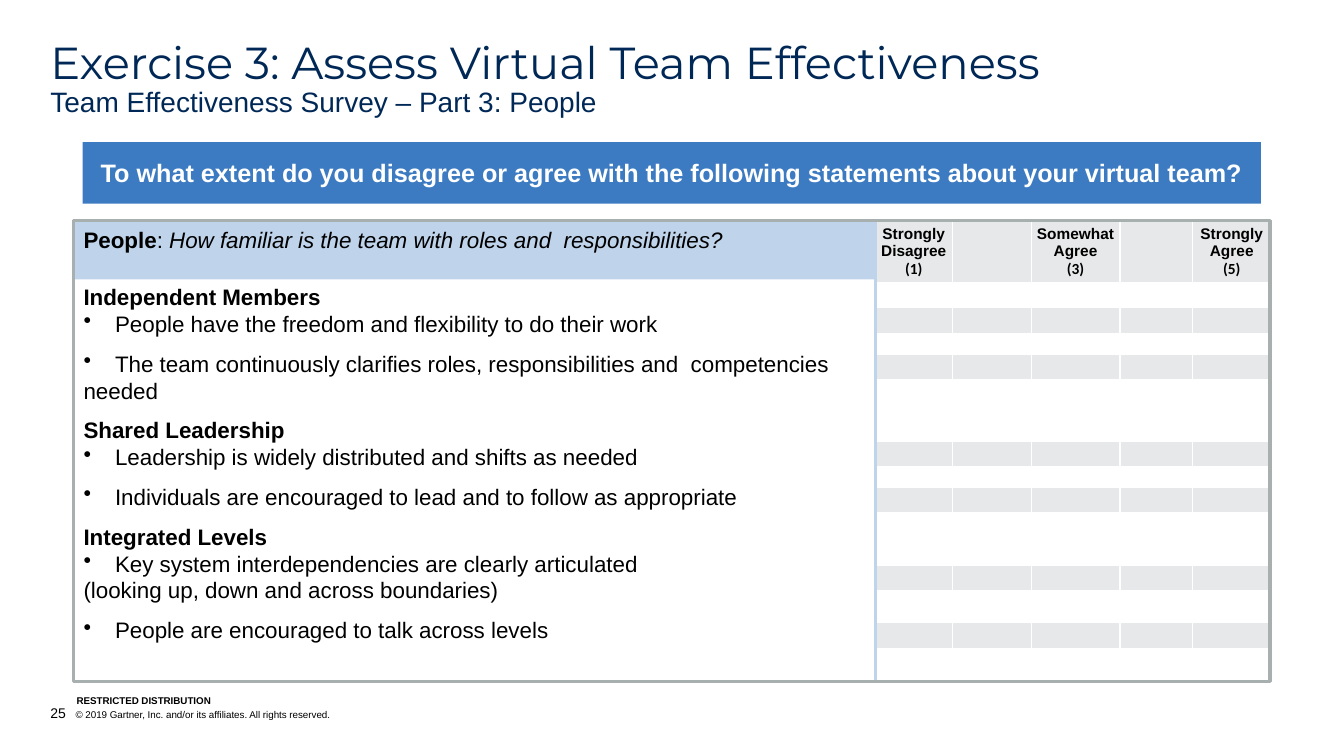
import pptx
import pptx.util
import pptx.dml.color
import pptx.enum.shapes
import pptx.enum.text
import pptx.oxml.ns
from lxml import etree

Pt = pptx.util.Pt
qn = pptx.oxml.ns.qn
ALIGN = pptx.enum.text.PP_ALIGN
ANCHOR = pptx.enum.text.MSO_ANCHOR
SHAPE = pptx.enum.shapes.MSO_SHAPE

COLORS = {"navy": "002856", "blue": "3C7BC1", "pale": "BFD3EB", "frame": "A7AFAF",
          "stripe": "E7E8E9", "white": "FFFFFF", "black": "000000"}

TITLE = [("Exercise 3: Assess Virtual Team Effectiveness", {"size": 32, "font": "Montserrat"}),
         ("Team Effectiveness Survey – Part 3: People", {"size": 20})]
QUESTION = "To what extent do you disagree or agree with the following statements about your virtual team?"
TOPIC = [("People", {"bold": True}), (": ", {}),
         ("How familiar is the team with roles and  responsibilities?", {"italic": True})]
SECTIONS = [
    ("Independent Members", [
        ["People have the freedom and flexibility to do their work"],
        ["The team continuously clarifies roles, responsibilities and  competencies", "needed"]]),
    ("Shared Leadership", [
        ["Leadership is widely distributed and shifts as needed"],
        ["Individuals are encouraged to lead and to follow as appropriate"]]),
    ("Integrated Levels", [
        ["Key system interdependencies are clearly articulated",
         "(looking up, down and across boundaries)"],
        ["People are encouraged to talk across levels"]]),
]
SCALE = {0: ("Strongly Disagree", "(1)"), 2: ("Somewhat Agree", "(3)"), 4: ("Strongly Agree", "(5)")}
FOOTER = [("25", {"size": 10}),
          ("\t© 2019 Gartner, Inc. and/or its affiliates. All rights reserved.", {"size": 7})]
NOTICE = "RESTRICTED DISTRIBUTION"

COLS = [55.4, 56.2, 63.4, 51.8, 56.2]
ROWS = [43.9, 18, 18.7, 15.1, 18, 43.9, 18, 15.1, 18, 37.4, 18, 23, 18.7, 25.9]
TOP, LEFT, DIVIDER = 157.7, 52.6, 625.5
FRAME_W, FRAME_H = 854.6, 329
TOPIC_H = 41.8
TOPIC_GAP, ITEM_GAP = 22, 9.2


def rgb(name):
    return pptx.dml.color.RGBColor.from_string(COLORS[name])


def write(tf, text, size=16, font="Arial", color="black", bold=False, italic=False,
          align=ALIGN.LEFT, before=0, spacing=None, hang=0, bullet=False):
    """Add one paragraph of text, given as a string or as (text, format) runs."""
    p = tf.paragraphs[0]
    if p.runs:
        p = tf.add_paragraph()
    if hang:
        pPr = p._p.get_or_add_pPr()
        pPr.set("marL", str(Pt(hang)))
        pPr.set("indent", str(-Pt(hang)))
        if bullet:
            etree.SubElement(pPr, qn("a:buChar")).set("char", "•")
        else:
            tabs = etree.SubElement(pPr, qn("a:tabLst"))
            etree.SubElement(tabs, qn("a:tab"), pos=str(Pt(hang)), algn="l")
    p.alignment = align
    if before:
        p.space_before = Pt(before)
    if spacing:
        p.line_spacing = spacing
    base = {"size": size, "font": font, "bold": bold, "italic": italic}
    for words, changes in [(text, {})] if isinstance(text, str) else text:
        fmt = {**base, **changes}
        r = p.add_run()
        r.text = words
        r.font.size, r.font.name = Pt(fmt["size"]), fmt["font"]
        r.font.bold, r.font.italic = fmt["bold"], fmt["italic"]
        r.font.color.rgb = rgb(color)


def text_box(s, box, anchor):
    tf = s.shapes.add_textbox(*map(Pt, box)).text_frame
    tf.word_wrap = True
    tf.vertical_anchor = anchor
    tf.margin_left = tf.margin_right = tf.margin_top = tf.margin_bottom = 0
    return tf


def rectangle(s, box, fill=None, line=None):
    sp = s.shapes.add_shape(SHAPE.RECTANGLE, *map(Pt, box))
    sp.shadow.inherit = False
    if fill:
        sp.fill.solid()
        sp.fill.fore_color.rgb = rgb(fill)
    else:
        sp.fill.background()
    if line:
        sp.line.color.rgb = rgb(line)
        sp.line.width = Pt(2.5)
    else:
        sp.line.fill.background()
    sp.text_frame.word_wrap = True
    return sp


def style_cell(cell, fill):
    cell.margin_left = cell.margin_right = cell.margin_top = Pt(0.7)
    cell.margin_bottom = 0
    cell.vertical_anchor = ANCHOR.MIDDLE
    tcPr = cell._tc.get_or_add_tcPr()
    for side in ("lnL", "lnR", "lnT", "lnB"):
        ln = etree.SubElement(tcPr, qn("a:" + side), w=str(Pt(1)))
        solid = etree.SubElement(ln, qn("a:solidFill"))
        etree.SubElement(solid, qn("a:srgbClr"), val=COLORS["white"])
    cell.fill.solid()
    cell.fill.fore_color.rgb = rgb(fill)


def add_ratings(s):
    frame = s.shapes.add_table(len(ROWS), len(COLS), Pt(625), Pt(TOP), Pt(sum(COLS)), Pt(sum(ROWS)))
    table = frame.table
    table.first_row = table.horz_banding = False
    for column, width in zip(table.columns, COLS):
        column.width = Pt(width)
    for i, height in enumerate(ROWS):
        table.rows[i].height = Pt(height)
        for j in range(len(COLS)):
            cell = table.cell(i, j)
            style_cell(cell, "white" if i % 2 else "stripe")
            if i == 0 and j in SCALE:
                for words, font in zip(SCALE[j], ("Arial", "Calibri")):
                    write(cell.text_frame, words, size=11, font=font, bold=True, align=ALIGN.CENTER)
            else:
                p = cell.text_frame.paragraphs[0]
                etree.SubElement(p._p, qn("a:endParaRPr"), sz="800")


def add_survey(s):
    line = s.shapes.add_connector(pptx.enum.shapes.MSO_CONNECTOR.STRAIGHT, Pt(DIVIDER), Pt(TOP),
                                  Pt(DIVIDER), Pt(TOP + FRAME_H))
    line.line.color.rgb = rgb("pale")
    line.line.width = Pt(2.5)
    etree.SubElement(line._element.spPr, qn("a:effectLst"))
    rectangle(s, (LEFT, TOP, DIVIDER - LEFT, TOPIC_H), fill="pale")
    tf = rectangle(s, (LEFT, TOP, FRAME_W, FRAME_H), line="frame").text_frame
    tf.vertical_anchor = ANCHOR.TOP
    write(tf, TOPIC)
    for k, (heading, items) in enumerate(SECTIONS):
        write(tf, heading, bold=True, before=ITEM_GAP if k else TOPIC_GAP)
        for n, (first, *rest) in enumerate(items):
            write(tf, first, before=ITEM_GAP if n else 0, hang=22.5, bullet=True)
            for words in rest:
                write(tf, words)


def main():
    prs = pptx.Presentation()
    prs.slide_width, prs.slide_height = Pt(960), Pt(540)
    s = prs.slides.add_slide(prs.slide_layouts[6])
    write(text_box(s, (36, 503.3, 575.3, 12.2), ANCHOR.BOTTOM), FOOTER, hang=18)
    write(text_box(s, (54.7, 496.1, 182.2, 8.6), ANCHOR.BOTTOM), NOTICE, size=7, bold=True)
    add_ratings(s)
    tf = text_box(s, (36, 28.8, 887.8, 34.6), ANCHOR.TOP)
    for run in TITLE:
        write(tf, [run], color="navy", spacing=0.9)
    add_survey(s)
    tf = rectangle(s, (59, 101.5, 841.7, 43.9), fill="blue").text_frame
    tf.vertical_anchor = ANCHOR.MIDDLE
    write(tf, QUESTION, size=18, color="white", bold=True, align=ALIGN.CENTER)
    prs.save("out.pptx")


if __name__ == "__main__":
    main()
